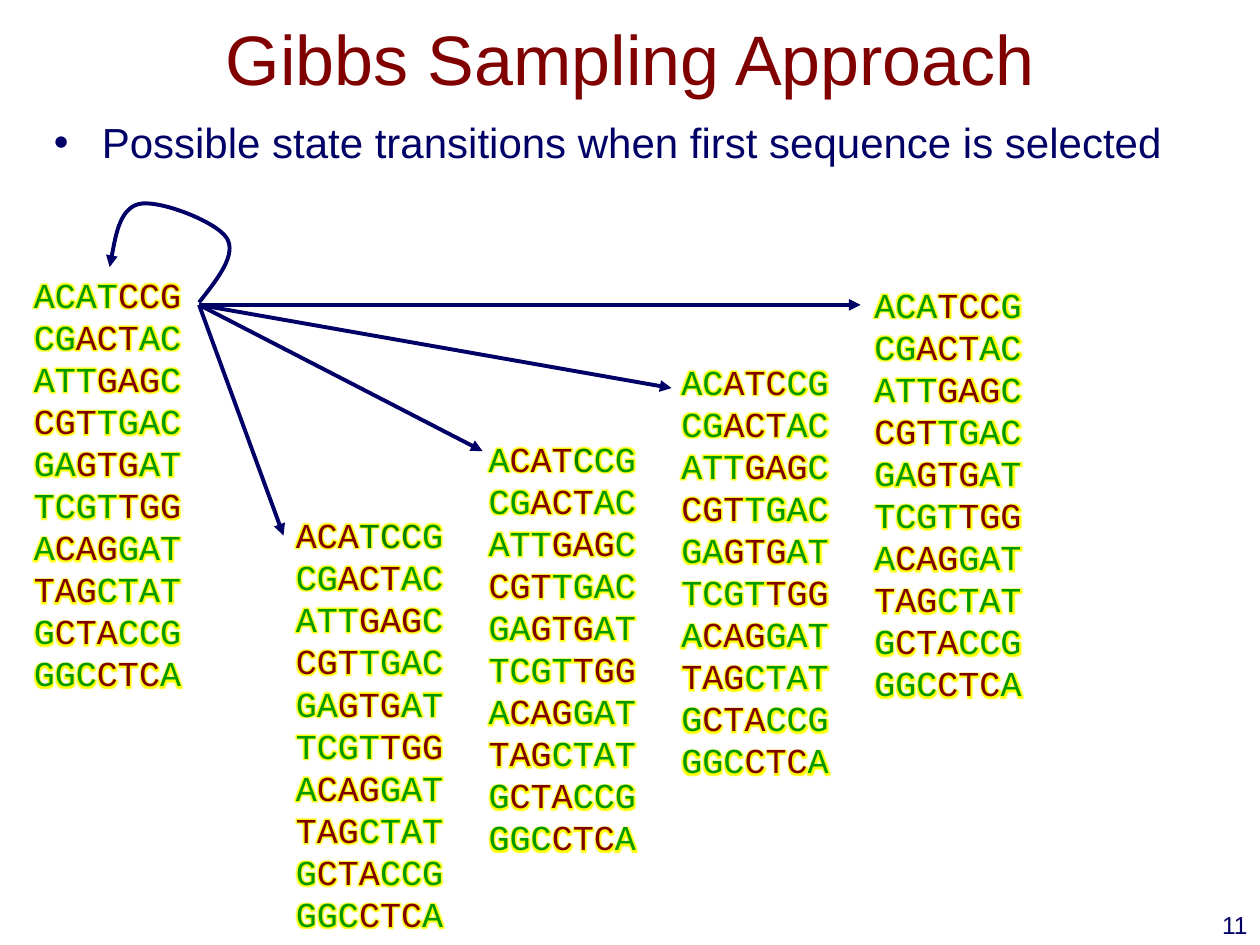
from itertools import groupby

from lxml import etree
from pptx import Presentation
from pptx.dml.color import RGBColor
from pptx.enum.shapes import MSO_CONNECTOR
from pptx.enum.text import MSO_ANCHOR, MSO_AUTO_SIZE, PP_ALIGN
from pptx.oxml.ns import qn
from pptx.util import Inches, Pt

COLOURS = {"title": "800000", "navy": "000066", "motif": "800000",
           "other": "009900", "deep": "008000", "glow": "FFFF00"}
COLUMNS, ROWS = 100, 75
MOTIF_LENGTH = 3

# Each sequence after the first, with the start of its motif
LATER_SEQUENCES = [("CGACTAC", 2), ("ATTGAGC", 3), ("CGTTGAC", 0),
                   ("GAGTGAT", 2), ("TCGTTGG", 4), ("ACAGGAT", 1),
                   ("TAGCTAT", 0), ("GCTACCG", 1), ("GGCCTCA", 3)]
FIRST_SEQUENCE = "ACATCCG"


def add_text(paragraph, text, size=20, font="Arial", colour="navy", glow=False):
    run = paragraph.add_run()
    run.text = text
    run.font.size = Pt(size)
    run.font.name = font
    run.font.color.rgb = RGBColor.from_string(COLOURS[colour])
    if glow:
        effects = etree.Element(qn("a:effectLst"))
        halo = etree.SubElement(effects, qn("a:glow"), rad="63500")
        etree.SubElement(halo, qn("a:srgbClr"), val=COLOURS["glow"])
        run.font.fill  # the effect list follows the fill in the run properties
        run.font._element.find(qn("a:solidFill")).addnext(effects)
    return run


class SlideBuilder:
    def __init__(self, presentation):
        self.column = presentation.slide_width / COLUMNS
        self.row = presentation.slide_height / ROWS
        self.slide = presentation.slides.add_slide(presentation.slide_layouts[6])

    def point(self, column, row):
        return round(column * self.column), round(row * self.row)

    def text_box(self, left, top, width, height, wrap=True):
        shape = self.slide.shapes.add_textbox(*self.point(left, top),
                                              *self.point(width, height))
        shape.text_frame.word_wrap = wrap
        return shape.text_frame

    def label(self, place, text, align=PP_ALIGN.LEFT, anchor=MSO_ANCHOR.TOP, **style):
        frame = self.text_box(*place)
        frame.vertical_anchor = anchor
        paragraph = frame.paragraphs[0]
        paragraph.alignment = align
        add_text(paragraph, text, **style)
        return paragraph

    def bullet(self, place, text, size):
        paragraph = self.label(place, text, size=size)
        paragraph.line_spacing = 0.9
        paragraph.space_before = Pt(size * 0.2)
        properties = paragraph._p.get_or_add_pPr()
        indent = Inches(0.38)
        properties.set("marL", str(indent))
        properties.set("indent", str(-indent))
        etree.SubElement(properties, qn("a:buFont"), typeface="Arial")
        etree.SubElement(properties, qn("a:buChar"), char="•")

    def alignment_state(self, left, top, first_colours):
        """Stack the sequences; first_colours has one letter per base of the first."""
        frame = self.text_box(left, top, 13.8, 34.7, wrap=False)
        frame.auto_size = MSO_AUTO_SIZE.SHAPE_TO_FIT_TEXT
        rows = [(FIRST_SEQUENCE, first_colours)]
        for sequence, start in LATER_SEQUENCES:
            marks = "o" * start + "m" * MOTIF_LENGTH
            rows.append((sequence, marks.ljust(len(sequence), "o")))
        names = {"m": "motif", "o": "other", "d": "deep"}
        for index, (sequence, marks) in enumerate(rows):
            paragraph = frame.add_paragraph() if index else frame.paragraphs[0]
            for mark, group in groupby(zip(marks, sequence), key=lambda pair: pair[0]):
                add_text(paragraph, "".join(base for _, base in group),
                         font="Courier New", colour=names[mark], glow=True)

    def style_arrow(self, shape):
        shape.line.color.rgb = RGBColor.from_string(COLOURS["navy"])
        shape.line.width = Pt(2.25)
        etree.SubElement(shape.line._get_or_add_ln(), qn("a:tailEnd"), type="triangle")

    def arrow(self, start, end):
        connector = self.slide.shapes.add_connector(
            MSO_CONNECTOR.STRAIGHT, *self.point(*start), *self.point(*end))
        self.style_arrow(connector)
        etree.SubElement(connector._element.spPr, qn("a:effectLst"))

    def curved_arrow(self, points):
        """Draw Bézier curves: a start, then two controls and an end per curve."""
        vertices = [self.point(*point) for point in points]
        builder = self.slide.shapes.build_freeform(*vertices[0])
        builder.add_line_segments(vertices[1:], close=False)
        shape = builder.convert_to_shape()
        shape.shadow.inherit = False
        shape.fill.background()
        self.style_arrow(shape)
        # Regroup the straight segments as cubic curves
        path = next(shape._element.iter(qn("a:path")))
        segments = path.findall(qn("a:lnTo"))
        for first in range(0, len(segments), 3):
            curve = etree.SubElement(path, qn("a:cubicBezTo"))
            for segment in segments[first:first + 3]:
                curve.append(segment[0])
                path.remove(segment)


def main():
    presentation = Presentation()
    presentation.slide_width, presentation.slide_height = Inches(10), Inches(7.5)
    builder = SlideBuilder(presentation)

    # Heading and bullet
    builder.label((7.5, -1.7, 85, 12.5), "Gibbs Sampling Approach", size=40,
                  colour="title", align=PP_ALIGN.CENTER, anchor=MSO_ANCHOR.MIDDLE)
    builder.bullet((3.3, 9.2, 93.3, 9.2),
                   "Possible state transitions when first sequence is selected", 24)

    # Current state, then the reachable states rising to the right
    builder.alignment_state(1.7, 21.2, "oooommm")
    for step, marks in enumerate(["mmmdddo", "ommmdoo", "oommmoo", "ooommmo"]):
        builder.alignment_state(22.5 + 15.3 * step, 40.3 - 6.1 * step, marks)

    # Transitions
    for end in [(68.3, 24.2), (53.3, 30.8), (38.3, 35.8), (22.5, 42.5)]:
        builder.arrow((15.8, 24.2), end)
    builder.curved_arrow([(15.8, 24), (17.3, 22.1), (18.8, 20.2), (18, 18.9),
                          (17.2, 17.6), (12.6, 15.8), (11, 16.2),
                          (9.4, 16.6), (8.7, 21.2), (8.7, 21.2)])

    # Slide number
    builder.label((79.2, 71.7, 20.8, 5), "11", size=14, align=PP_ALIGN.RIGHT)

    presentation.save("out.pptx")


if __name__ == "__main__":
    main()
